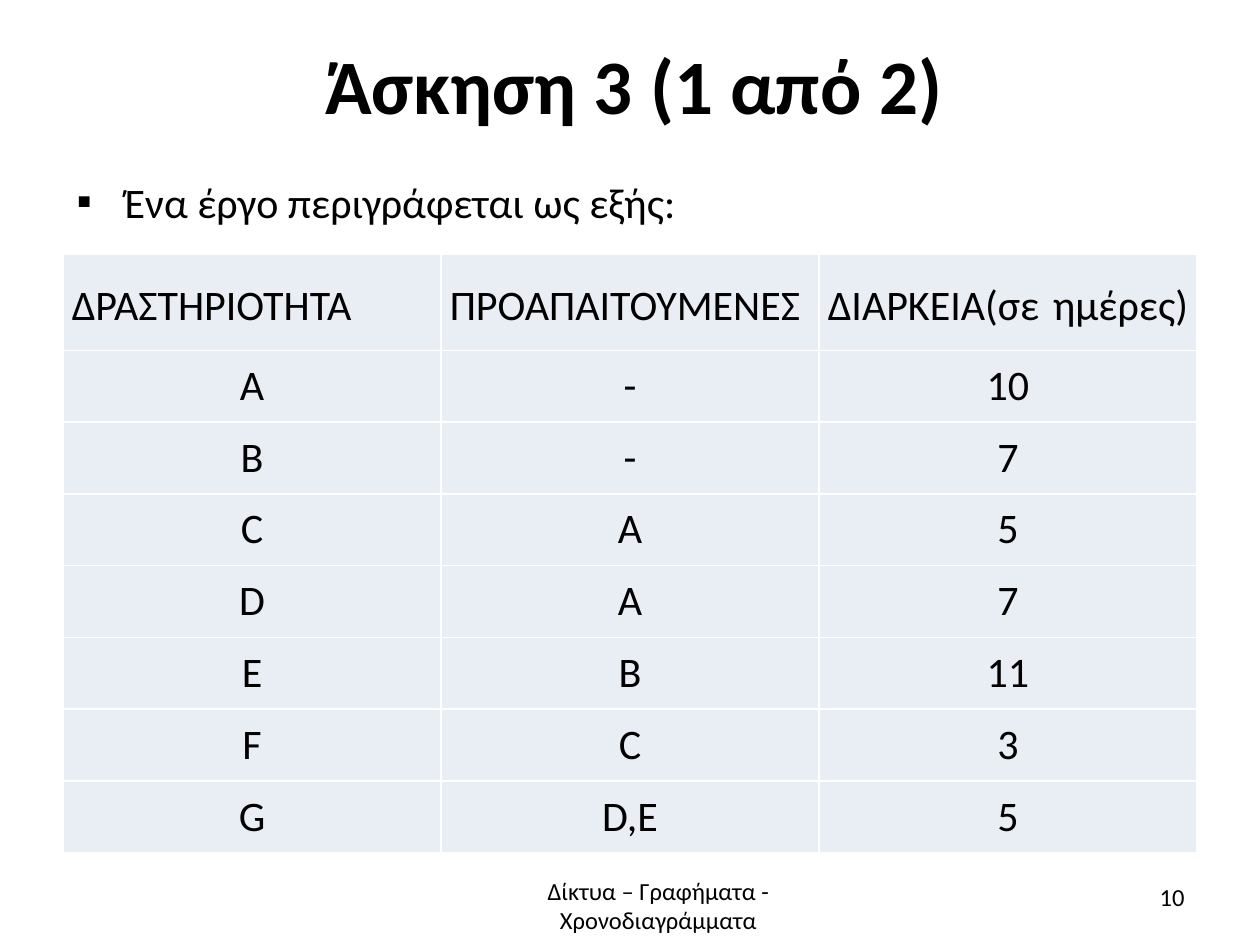
"""Build the exercise slide with its table of project activities."""
from dataclasses import dataclass

from lxml import etree
from pptx import Presentation
from pptx import util as u
from pptx.dml.color import RGBColor
from pptx.enum import text as t
from pptx.oxml import ns

BLACK = RGBColor(0x00, 0x00, 0x00)
WHITE = RGBColor(0xFF, 0xFF, 0xFF)
PALE_BLUE = RGBColor(0xE9, 0xED, 0xF4)
FONT = "Calibri"
HEADERS = ("ΔΡΑΣΤΗΡΙΟΤΗΤΑ ", "ΠΡΟΑΠΑΙΤΟΥΜΕΝΕΣ ", "ΔΙΑΡΚΕΙΑ(σε ημέρες) ")


@dataclass(frozen=True)
class Activity:
    name: str
    prerequisites: str
    days: int


@dataclass(frozen=True)
class Box:
    left: float
    top: float
    width: float
    height: float

    def lengths(self) -> tuple:
        return tuple(map(u.Inches, (self.left, self.top, self.width, self.height)))


@dataclass(frozen=True)
class FooterItem:
    wording: str
    box: Box
    alignment: t.PP_ALIGN


ACTIVITIES = (
    Activity("A", "-", 10),
    Activity("B", "-", 7),
    Activity("C", "A", 5),
    Activity("D", "A", 7),
    Activity("E", "B", 11),
    Activity("F", "C", 3),
    Activity("G", "D,E", 5),
)
FOOTER = (
    FooterItem("Δίκτυα – Γραφήματα - Χρονοδιαγράμματα",
               Box(3.48, 6.9, 3.49, 0.55), t.PP_ALIGN.CENTER),
    FooterItem("10", Box(7.17, 6.95, 2.33, 0.4), t.PP_ALIGN.RIGHT),
)


def write(frame, wording: str, size: float, alignment: t.PP_ALIGN,
          spacing: float = 1.0, bold: bool = False):
    paragraph = frame.paragraphs[0]
    paragraph.alignment = alignment
    paragraph.line_spacing = spacing
    paragraph.space_before = u.Pt(0)
    run = paragraph.add_run()
    run.text = wording
    run.font.name = FONT
    run.font.size = u.Pt(size)
    run.font.bold = bold
    run.font.color.rgb = BLACK
    return paragraph


def place(shape, box: Box) -> None:
    shape.left, shape.top, shape.width, shape.height = box.lengths()


def add_title(slide) -> None:
    title = slide.shapes.title
    place(title, Box(0.43, 0.05, 9.21, 1.26))
    frame = title.text_frame
    frame.auto_size = t.MSO_AUTO_SIZE.NONE
    frame.vertical_anchor = t.MSO_ANCHOR.MIDDLE
    frame.margin_left = frame.margin_right = frame.margin_bottom = 0
    frame.margin_top = u.Inches(0.02)
    write(frame, "Άσκηση 3 (1 από 2)", 44, t.PP_ALIGN.CENTER, 0.98, True)


def add_introduction(slide) -> None:
    body = slide.placeholders[1]
    place(body, Box(0.51, 1.15, 8.99, 0.64))
    frame = body.text_frame
    frame.auto_size = t.MSO_AUTO_SIZE.SHAPE_TO_FIT_TEXT
    paragraph = write(frame, "Ένα έργο περιγράφεται ως εξής:", 24, t.PP_ALIGN.LEFT, 1.5)
    properties = paragraph._p.get_or_add_pPr()
    indent = u.Inches(0.38)
    properties.set("marL", str(indent))
    properties.set("indent", str(-indent))
    etree.SubElement(properties, ns.qn("a:buFont"), typeface="Wingdings")
    properties[-1].set("typeface", FONT)
    etree.SubElement(properties, ns.qn("a:buChar"), char="▪")


def add_borders(cell) -> None:
    properties = cell._tc.get_or_add_tcPr()
    for side in ("lnL", "lnR", "lnT", "lnB"):
        line = etree.SubElement(properties, ns.qn(f"a:{side}"), w=str(u.Pt(1)))
        fill = etree.SubElement(line, ns.qn("a:solidFill"))
        etree.SubElement(fill, ns.qn("a:srgbClr"), val=str(WHITE))


def fill_cell(cell, wording: str, is_header: bool) -> None:
    add_borders(cell)
    cell.fill.solid()
    cell.fill.fore_color.rgb = PALE_BLUE
    cell.margin_left = cell.margin_right = u.Inches(0.07)
    cell.margin_top = cell.margin_bottom = 0
    if is_header:
        cell.vertical_anchor = t.MSO_ANCHOR.TOP
        write(cell.text_frame, wording, 24, t.PP_ALIGN.JUSTIFY, 1.5)
    else:
        cell.vertical_anchor = t.MSO_ANCHOR.MIDDLE
        write(cell.text_frame, wording, 24, t.PP_ALIGN.CENTER)


def add_activity_table(slide) -> None:
    rows = [HEADERS] + [(a.name, a.prerequisites, str(a.days)) for a in ACTIVITIES]
    box = Box(0.5, 2.02, 9, 4.72)
    table = slide.shapes.add_table(len(rows), len(HEADERS), *box.lengths()).table
    table.first_row = table.horz_banding = False
    for column in table.columns:
        column.width = u.Inches(box.width / len(HEADERS))
    for index, wordings in enumerate(rows):
        table.rows[index].height = u.Inches(0.57 if index else 0.76)
        for column_index, wording in enumerate(wordings):
            fill_cell(table.cell(index, column_index), wording, index == 0)


def add_footer_item(slide, item: FooterItem) -> None:
    frame = slide.shapes.add_textbox(*item.box.lengths()).text_frame
    frame.word_wrap = True
    write(frame, item.wording, 14, item.alignment)


def main() -> None:
    presentation = Presentation()
    presentation.slide_width = u.Inches(10)
    presentation.slide_height = u.Inches(7.5)
    slide = presentation.slides.add_slide(presentation.slide_layouts[1])
    slide.background.fill.solid()
    slide.background.fill.fore_color.rgb = WHITE
    add_title(slide)
    add_introduction(slide)
    add_activity_table(slide)
    for item in FOOTER:
        add_footer_item(slide, item)
    presentation.save("out.pptx")


if __name__ == "__main__":
    main()
